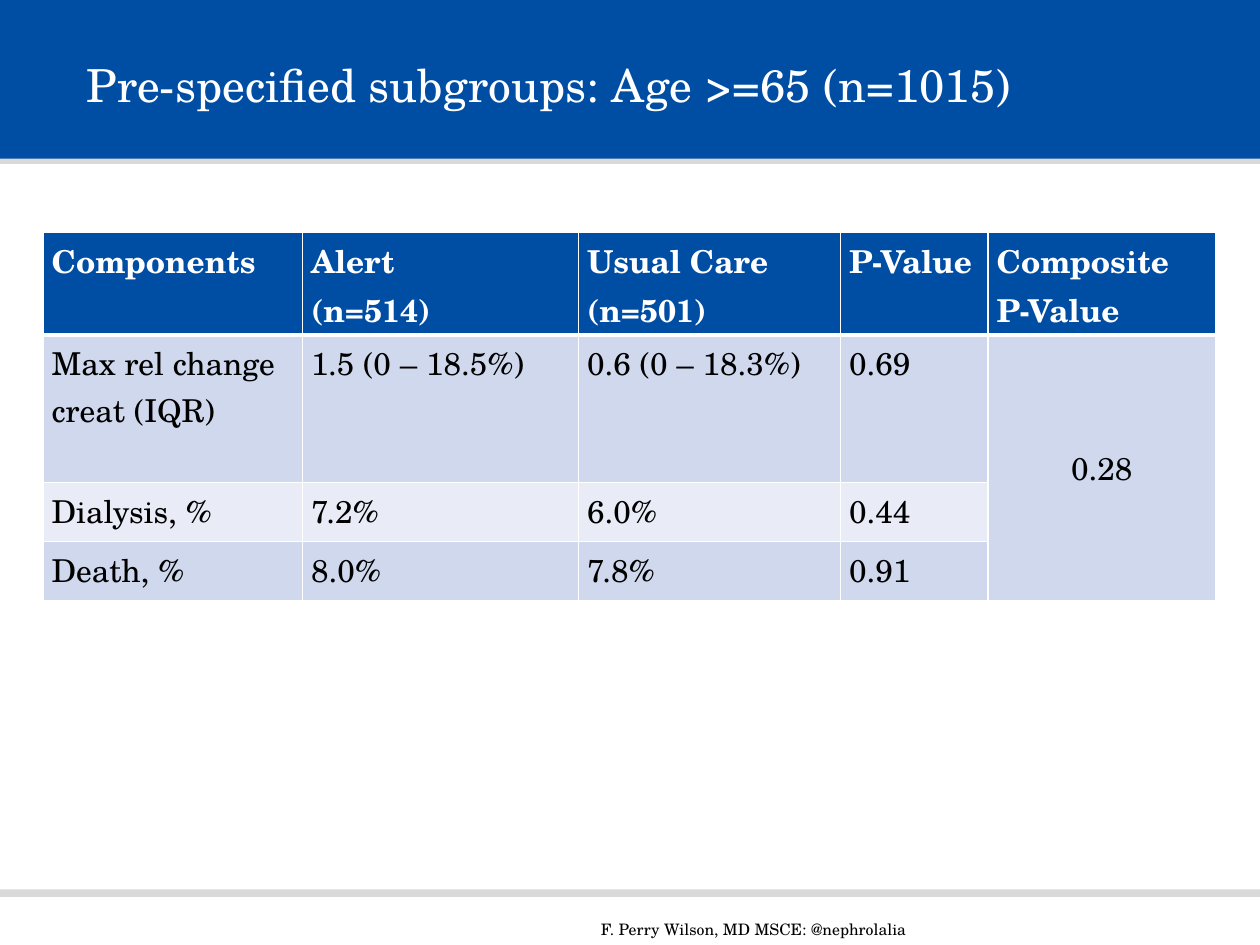
from lxml.etree import SubElement
from pptx import Presentation
from pptx.dml.color import RGBColor
from pptx.enum.shapes import MSO_SHAPE as Shape
from pptx.enum.text import MSO_ANCHOR as Anchor, PP_ALIGN as Align
from pptx.oxml.ns import qn
from pptx.util import Inches, Pt

FONT = "TeX Gyre Schola"
BLUE = RGBColor(0x00, 0x4D, 0xA4)
GREY = RGBColor(0xDA, 0xD9, 0xD9)
DARK_BAND = RGBColor(0xCF, 0xD8, 0xEC)
LIGHT_BAND = RGBColor(0xE9, 0xEC, 0xF6)
WHITE = RGBColor(0xFF, 0xFF, 0xFF)
BLACK = RGBColor(0x00, 0x00, 0x00)


def write(frame, text, size, color, bold=False, align=Align.LEFT):
    frame.word_wrap = True
    frame.text = text
    for para in frame.paragraphs:
        para.alignment = align
        para.font.color.rgb = color
        for name, value in {"name": FONT, "size": Pt(size), "bold": bold}.items():
            setattr(para.font, name, value)


def add_border(cell, side, width):
    line = SubElement(cell._tc.get_or_add_tcPr(), qn(f"a:{side}"), w=str(Pt(width)))
    fill = SubElement(line, qn("a:solidFill"))
    SubElement(fill, qn("a:srgbClr"), val=str(WHITE))


deck = Presentation()
deck.slide_width, deck.slide_height = Inches(10), Inches(7.5)
page = deck.slides.add_slide(deck.slide_layouts[6])

# Full-width bands: header shade, header, footer rule
for top, height, color in [(1.05, 0.25, GREY), (-0.01, 1.27, BLUE), (7.06, 0.06, GREY)]:
    band = page.shapes.add_shape(
        Shape.RECTANGLE, 0, Inches(top), deck.slide_width, Inches(height))
    band.shadow.inherit = False
    band.fill.solid()
    band.fill.fore_color.rgb = color
    band.line.fill.background()

# Title and footer
for text, area, size, color, anchor in [
    ("Pre-specified subgroups: Age >=65 (n=1015)", (0.59, 0.17, 8.9, 1), 26, WHITE, Anchor.MIDDLE),
    ("F. Perry Wilson, MD MSCE: @nephrolalia", (4.67, 7.25, 2.92, 0.25), 9, BLACK, Anchor.TOP),
]:
    box = page.shapes.add_textbox(*map(Inches, area))
    write(box.text_frame, text, size, color)
    box.text_frame.vertical_anchor = anchor

# Subgroup table
rows = [
    ["Components", "Alert\n(n=514)", "Usual Care\n(n=501)", "P-Value", "Composite P-Value"],
    ["Max rel change creat (IQR)", "1.5 (0 – 18.5%)", "0.6 (0 – 18.3%)", "0.69", "0.28"],
    ["Dialysis, %", "7.2%", "6.0%", "0.44", ""],
    ["Death, %", "8.0%", "7.8%", "0.91", ""],
]
widths = [2.06, 2.19, 2.08, 1.17, 1.81]
heights = [0.82, 1.17, 0.47, 0.47]
table = page.shapes.add_table(
    len(rows), len(widths), Inches(0.34), Inches(1.84),
    Inches(sum(widths)), Inches(sum(heights))).table
for column, width in zip(table.columns, widths):
    column.width = Inches(width)
for row, height in zip(table.rows, heights):
    row.height = Inches(height)

margins = {"margin_left": 0.07, "margin_right": 0.07, "margin_top": 0.04, "margin_bottom": 0.04}
for r, texts in enumerate(rows):
    header = r == 0
    for c, text in enumerate(texts):
        cell = table.cell(r, c)
        for name, value in margins.items():
            setattr(cell, name, Inches(value))
        for side in ("lnL", "lnR", "lnT", "lnB"):
            below_header = (r, side) in [(0, "lnB"), (1, "lnT")]
            add_border(cell, side, 3 if below_header else 1)
        cell.fill.solid()
        cell.fill.fore_color.rgb = BLUE if header else DARK_BAND if r % 2 else LIGHT_BAND
        if text:
            write(cell.text_frame, text, 18, WHITE if header else BLACK, bold=header)

# The composite P-value spans all three components
composite = table.cell(1, 4)
composite.merge(table.cell(3, 4))
composite.vertical_anchor = Anchor.MIDDLE
composite.text_frame.paragraphs[0].alignment = Align.CENTER

deck.save("out.pptx")
